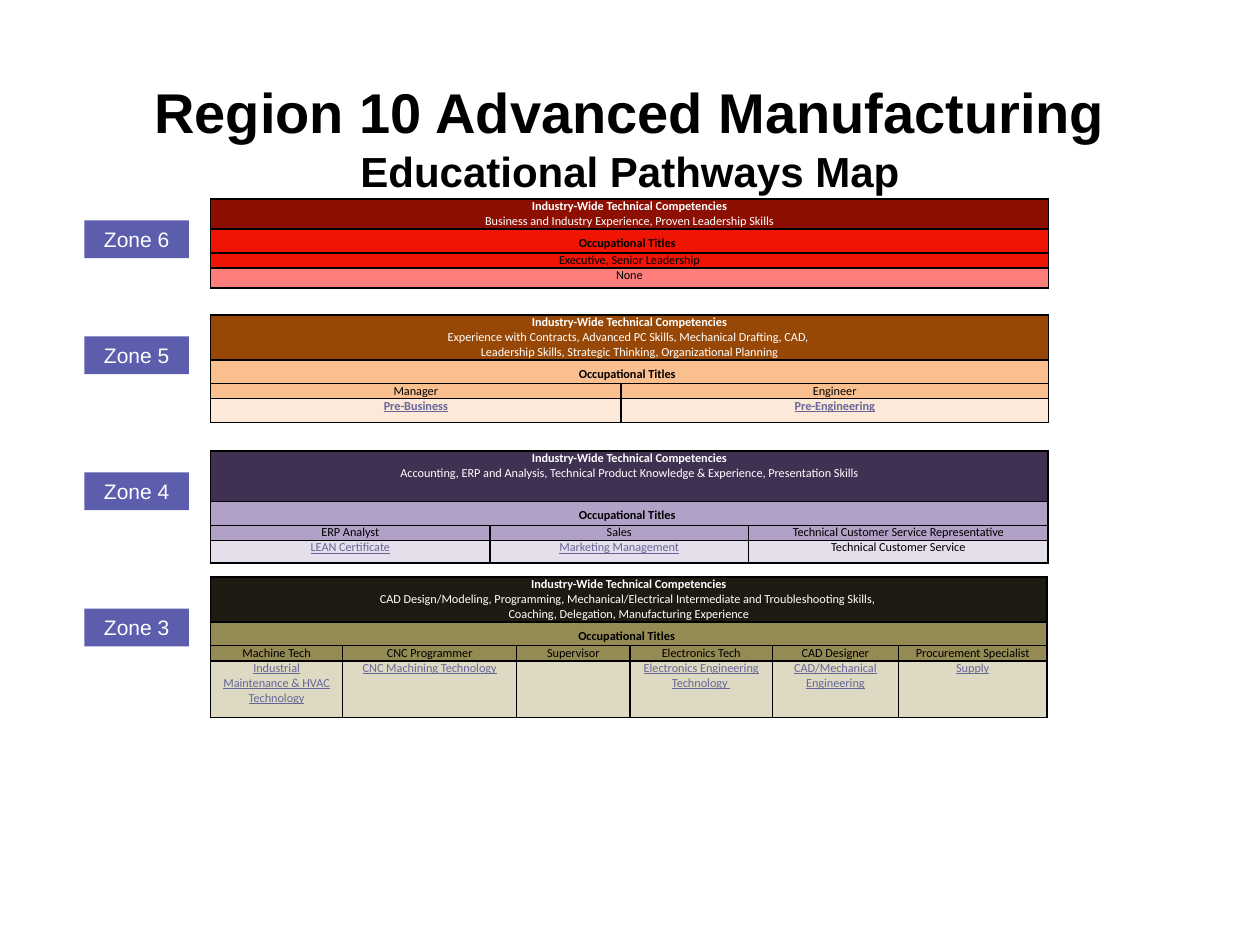
import pptx
import pptx.util
import pptx.dml.color
import pptx.enum.shapes
import pptx.enum.text
import pptx.oxml
from dataclasses import dataclass
from pptx.oxml.ns import nsdecls

Inches, Pt = pptx.util.Inches, pptx.util.Pt
RGBColor = pptx.dml.color.RGBColor
CENTER = pptx.enum.text.PP_ALIGN.CENTER
MIDDLE = pptx.enum.text.MSO_ANCHOR.MIDDLE

BLACK = RGBColor(0x00, 0x00, 0x00)
WHITE = RGBColor(0xFF, 0xFF, 0xFF)
LINK = RGBColor(0x66, 0x66, 0x99)
LABEL_FILL = RGBColor(0x5D, 0x5D, 0xAE)

TABLE_LEFT = 1.67
LABEL_LEFT, LABEL_WIDTH, LABEL_HEIGHT = 0.67, 0.83, 0.3


@dataclass
class Zone:
    name: str
    top: float
    label_top: float
    column_widths: list
    row_heights: list
    fills: list  # competencies, occupations, programs
    competencies: list
    occupations: list
    programs: list
    unlinked: tuple = ()
    bold_programs: bool = False


def palette(*codes):
    return [RGBColor.from_string(code) for code in codes]


ZONES = [
    Zone("Zone 6", 1.58, 1.75, [6.65], [0.23, 0.18, 0.12, 0.16],
         palette("8C0F02", "EF1403", "FD7E7B"),
         ["Business and Industry Experience, Proven Leadership Skills"],
         ["Executive, Senior Leadership"], ["None"], unlinked=("None",)),
    Zone("Zone 5", 2.5, 2.67, [3.26, 3.39], [0.35, 0.18, 0.12, 0.19],
         palette("984806", "FABF8F", "FDE9D9"),
         ["Experience with Contracts, Advanced PC Skills, Mechanical Drafting, CAD, ",
          "Leadership Skills, Strategic Thinking, Organizational Planning"],
         ["Manager", "Engineer"], ["Pre-Business", "Pre-Engineering"],
         bold_programs=True),
    Zone("Zone 4", 3.58, 3.75, [2.22, 2.05, 2.38], [0.4, 0.18, 0.12, 0.18],
         palette("403152", "B2A1C7", "E5DFEC"),
         ["Accounting, ERP and Analysis, Technical Product Knowledge & Experience, "
          "Presentation Skills"],
         ["ERP Analyst", "Sales", "Technical Customer Service Representative"],
         ["LEAN Certificate", "Marketing Management", "Technical Customer Service"],
         unlinked=("Technical Customer Service",)),
    Zone("Zone 3", 4.58, 4.83, [1.05, 1.38, 0.9, 1.13, 1, 1.18],
         [0.35, 0.18, 0.12, 0.45],
         palette("1D1B11", "948A54", "DDD9C3"),
         ["CAD Design/Modeling, Programming, Mechanical/Electrical Intermediate "
          "and Troubleshooting Skills, ",
          "Coaching, Delegation, Manufacturing Experience"],
         ["Machine Tech", "CNC Programmer", "Supervisor", "Electronics Tech",
          "CAD Designer", "Procurement Specialist"],
         ["Industrial Maintenance & HVAC Technology", "CNC Machining Technology", "",
          "Electronics Engineering Technology ", "CAD/Mechanical Engineering",
          "Supply"]),
]


def style(paragraph, size, color, font_name="Calibri", bold=False, underline=False):
    paragraph.alignment = CENTER
    font = paragraph.font
    font.name, font.size, font.bold = font_name, Pt(size), bold
    font.underline = underline
    font.color.rgb = color


def format_cell(cell, fill):
    cell.fill.solid()
    cell.fill.fore_color.rgb = fill
    cell.margin_left = cell.margin_right = Inches(0.08)
    cell.margin_top = cell.margin_bottom = 0
    # Borders come before the fill in the cell properties
    for index, side in enumerate(("lnL", "lnR", "lnT", "lnB")):
        border = pptx.oxml.parse_xml(
            f'<a:{side} {nsdecls("a")} w="{Pt(1)}"><a:solidFill>'
            f'<a:srgbClr val="{BLACK}"/></a:solidFill></a:{side}>')
        cell._tc.get_or_add_tcPr().insert(index, border)


def write_cell(cell, text, color=BLACK, bold=False, underline=False):
    cell.text = text
    style(cell.text_frame.paragraphs[0], 7, color, bold=bold, underline=underline)


def add_title(slide, left, top, width, height):
    title = slide.shapes.title
    title.left, title.top = Inches(left), Inches(top)
    title.width, title.height = Inches(width), Inches(height)
    title.text_frame.vertical_anchor = MIDDLE
    heading = title.text_frame.paragraphs[0]
    style(heading, 32, BLACK, "Arial", bold=True)
    heading.add_run().text = "Region 10 Advanced Manufacturing"
    heading.add_line_break()
    subtitle = heading.add_run()
    subtitle.text = "Educational Pathways Map"
    subtitle.font.size = Pt(24)


def add_zone_table(slide, zone, left, top):
    columns = len(zone.column_widths)
    table = slide.shapes.add_table(
        4, columns, Inches(left), Inches(top),
        Inches(sum(zone.column_widths)), Inches(sum(zone.row_heights))).table
    table.first_row = table.horz_banding = False
    for column, width in zip(table.columns, zone.column_widths):
        column.width = Inches(width)
    dark, middle, light = zone.fills
    for index, fill in enumerate((dark, middle, middle, light)):
        table.rows[index].height = Inches(zone.row_heights[index])
        for cell in table.rows[index].cells:
            format_cell(cell, fill)
    if columns > 1:
        for row in (0, 1):
            table.cell(row, 0).merge(table.cell(row, columns - 1))

    # Competencies
    competencies = table.cell(0, 0)
    write_cell(competencies, "Industry-Wide Technical Competencies", WHITE, bold=True)
    for line in zone.competencies:
        paragraph = competencies.text_frame.add_paragraph()
        paragraph.text = line
        style(paragraph, 7, WHITE)

    # Occupations heading, with a larger closing space that sets the line height
    occupations = table.cell(1, 0)
    write_cell(occupations, "Occupational Titles", bold=True)
    spacer = occupations.text_frame.paragraphs[0].add_run()
    spacer.text = " "
    spacer.font.size = Pt(11)
    spacer.font.bold = False

    # Occupations and their programs
    for column, (occupation, program) in enumerate(zip(zone.occupations, zone.programs)):
        write_cell(table.cell(2, column), occupation)
        linked = program not in zone.unlinked
        write_cell(table.cell(3, column), program, LINK if linked else BLACK,
                   bold=zone.bold_programs, underline=linked)


def add_zone_label(slide, name, left, top, width, height):
    label = slide.shapes.add_shape(
        pptx.enum.shapes.MSO_SHAPE.RECTANGLE,
        Inches(left), Inches(top), Inches(width), Inches(height))
    label.shadow.inherit = False
    label.fill.solid()
    label.fill.fore_color.rgb = LABEL_FILL
    label.line.fill.background()
    label.text_frame.text = name
    label.text_frame.vertical_anchor = MIDDLE
    style(label.text_frame.paragraphs[0], 12, WHITE, "Arial")


def main():
    presentation = pptx.Presentation()
    presentation.slide_width, presentation.slide_height = Inches(10), Inches(7.5)
    slide = presentation.slides.add_slide(presentation.slide_layouts[5])
    add_title(slide, 0.5, 0.5, 9, 1.17)
    for zone in ZONES:
        add_zone_table(slide, zone, TABLE_LEFT, zone.top)
    for zone in ZONES:
        add_zone_label(slide, zone.name, LABEL_LEFT, zone.label_top,
                       LABEL_WIDTH, LABEL_HEIGHT)
    presentation.save("out.pptx")


if __name__ == "__main__":
    main()
